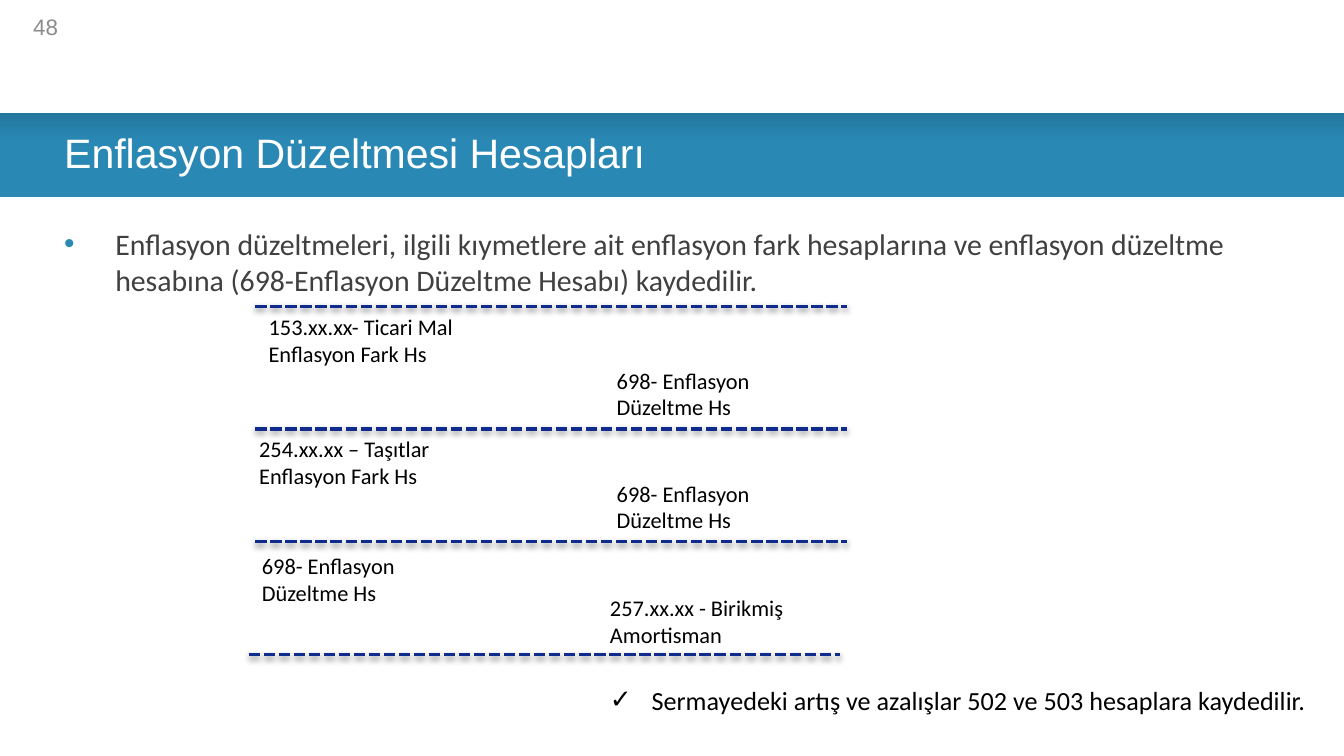
import pptx
import pptx.dml.color
import pptx.enum.dml
import pptx.enum.shapes
import pptx.enum.text
import pptx.oxml
import pptx.oxml.ns
import pptx.util
from pptx.util import Inches

THEME = {
    "heading_font": "Arial", "body_font": "Calibri",
    "title_size": 22, "body_size": 16, "note_size": 14, "entry_size": 12,
    "band_top": "24779F", "band": "2A88B4", "bullet": "2A89B4", "rule": "0E2B8D",
    "white": "FFFFFF", "body": "404040", "black": "000000", "number": "8C8C8C",
}

SLIDE_WIDTH = 10
SLIDE_HEIGHT = SLIDE_WIDTH * 9 / 16

PAGE_NUMBER = "48"
TITLE = "Enflasyon Düzeltmesi Hesapları"
INTRO = ("Enflasyon düzeltmeleri, ilgili kıymetlere ait enflasyon fark hesaplarına "
         "ve enflasyon düzeltme hesabına (698-Enflasyon Düzeltme Hesabı) kaydedilir.")
NOTE = "Sermayedeki artış ve azalışlar 502 ve 503 hesaplara kaydedilir."
ADJUSTMENT = "698- Enflasyon Düzeltme Hs"

# Journal entries: (left, top, text), debits on the left and credits on the right
ENTRIES = [
    (1.9, 2.28, "153.xx.xx- Ticari Mal Enflasyon Fark Hs"),
    (4.49, 2.68, ADJUSTMENT),
    (1.83, 3.19, "254.xx.xx – Taşıtlar\nEnflasyon Fark Hs"),
    (4.49, 3.52, ADJUSTMENT),
    (1.85, 4.06, ADJUSTMENT),
    (4.44, 4.37, "257.xx.xx - Birikmiş Amortisman"),
]
ENTRY_SIZE = (1.81, 0.5)
RULES = [(1.9, 2.28), (1.9, 3.19), (1.9, 4.03), (1.85, 4.87)]  # left, y
RULE_LENGTH = 4.4

RULE_SHADOW = (
    f'<a:effectLst {pptx.oxml.ns.nsdecls("a")}>'
    '<a:outerShdw blurRad="39370" dist="20320" dir="5400000" rotWithShape="0">'
    '<a:srgbClr val="000000"><a:alpha val="38000"/></a:srgbClr>'
    '</a:outerShdw></a:effectLst>')


def rgb(name):
    return pptx.dml.color.RGBColor.from_string(THEME[name])


def add_bullet(p, char, indent, color):
    pPr = p._p.get_or_add_pPr()
    pPr.set("marL", str(Inches(indent)))
    pPr.set("indent", str(-Inches(indent)))
    ns = pptx.oxml.ns.nsdecls("a")
    for xml in (f'<a:buClr {ns}><a:srgbClr val="{THEME[color]}"/></a:buClr>',
                f'<a:buFont {ns} typeface="Arial"/>',
                f'<a:buChar {ns} char="{char}"/>'):
        pPr.append(pptx.oxml.parse_xml(xml))


def add_text(s, text, left, top, width, height, size="entry_size", color="black",
             font="body_font", align="LEFT", anchor="TOP", bullet=None):
    """Add one paragraph per line; bullet is (character, indent, colour)."""
    box = s.shapes.add_textbox(Inches(left), Inches(top), Inches(width), Inches(height))
    tf = box.text_frame
    tf.word_wrap = True
    tf.vertical_anchor = getattr(pptx.enum.text.MSO_ANCHOR, anchor)
    tf.text = text
    for p in tf.paragraphs:
        p.alignment = getattr(pptx.enum.text.PP_ALIGN, align)
        if bullet:
            add_bullet(p, *bullet)
        for r in p.runs:
            r.font.name = THEME[font]
            r.font.size = pptx.util.Pt(THEME[size])
            r.font.color.rgb = rgb(color)


def add_title_band(s):
    sp = s.shapes.add_shape(pptx.enum.shapes.MSO_SHAPE.RECTANGLE,
                            0, Inches(0.84), Inches(SLIDE_WIDTH), Inches(0.63))
    sp.shadow.inherit = False
    sp.line.fill.background()
    sp.fill.gradient()
    sp.fill.gradient_angle = 270
    stops = [(0, "band_top"), (0.34, "band")]
    for stop, (position, color) in zip(sp.fill.gradient_stops, stops):
        stop.position = position
        stop.color.rgb = rgb(color)


def add_rule(s, left, y):
    line = s.shapes.add_connector(pptx.enum.shapes.MSO_CONNECTOR.STRAIGHT, Inches(left),
                                  Inches(y), Inches(left + RULE_LENGTH), Inches(y))
    line.line.color.rgb = rgb("rule")
    line.line.width = pptx.util.Pt(2)
    line.line.dash_style = pptx.enum.dml.MSO_LINE.SQUARE_DOT
    line._element.spPr.append(pptx.oxml.parse_xml(RULE_SHADOW))


def main():
    prs = pptx.Presentation()
    prs.slide_width, prs.slide_height = Inches(SLIDE_WIDTH), Inches(SLIDE_HEIGHT)
    s = prs.slides.add_slide(prs.slide_layouts[6])

    add_title_band(s)
    add_text(s, INTRO, 0.38, 1.63, 9, 3.37, size="body_size", color="body",
             bullet=("•", 0.38, "bullet"))
    add_text(s, TITLE, 0.38, 0.87, 9, 0.53, size="title_size", color="white",
             font="heading_font", anchor="MIDDLE")
    for left, y in RULES:
        add_rule(s, left, y)
    for left, top, text in ENTRIES:
        add_text(s, text, left, top, *ENTRY_SIZE)
    add_text(s, NOTE, 4.44, 5.04, 5.4, 0.34, size="note_size",
             bullet=("✓", 0.31, "black"))
    add_text(s, PAGE_NUMBER, 0.04, 0.05, 0.49, 0.3, color="number",
             font="heading_font", align="RIGHT", anchor="MIDDLE")
    prs.save("out.pptx")


if __name__ == "__main__":
    main()
